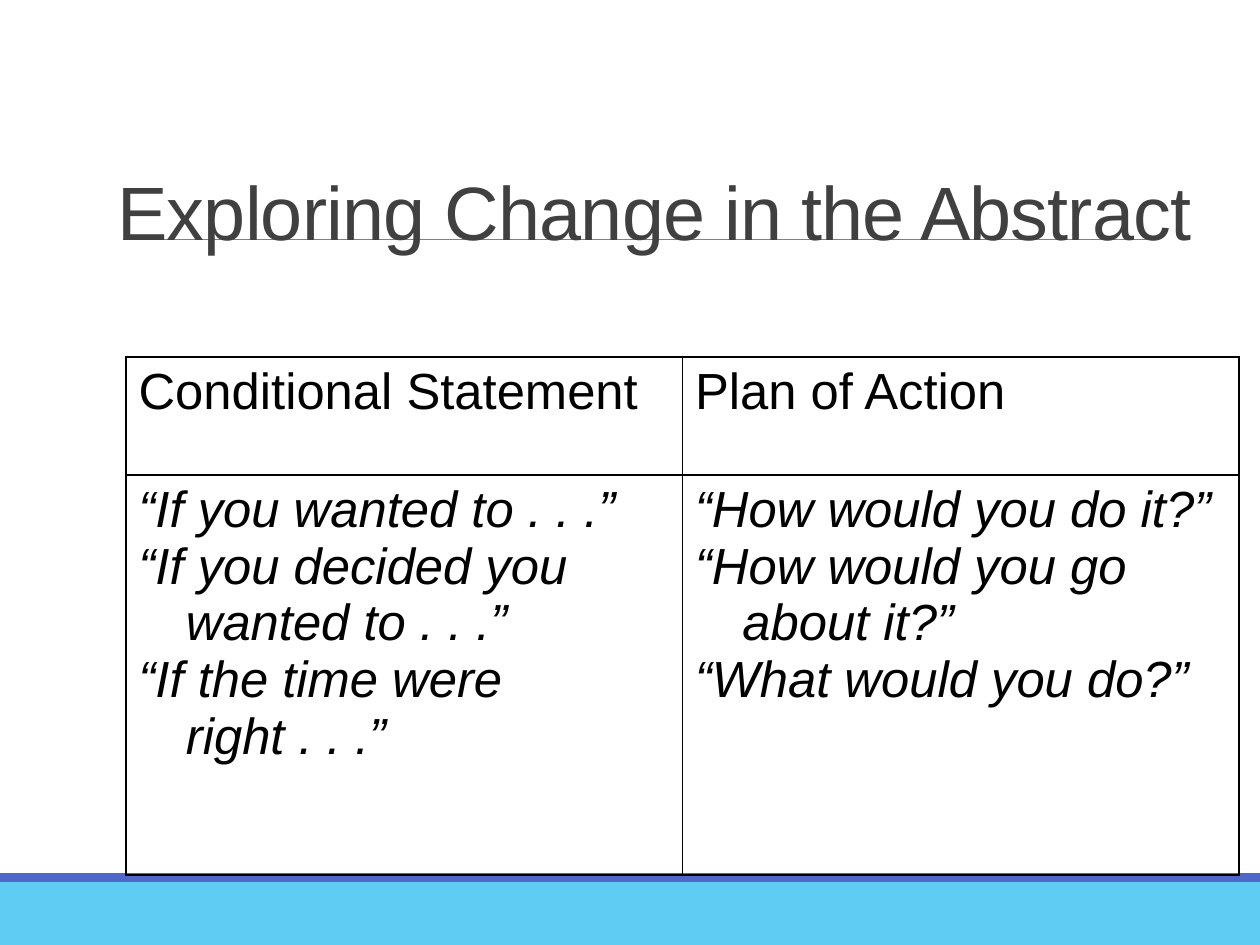
from dataclasses import dataclass

from lxml.etree import SubElement
from pptx import Presentation
from pptx.dml.color import RGBColor
from pptx.enum.shapes import MSO_CONNECTOR, MSO_SHAPE
from pptx.enum.text import MSO_ANCHOR
from pptx.oxml.ns import qn
from pptx.util import Pt


@dataclass(frozen=True)
class Theme:
    font: str = "Arial"
    title_size: float = 43.2
    table_size: float = 29
    title: str = "404040"
    text: str = "000000"
    border: str = "000000"
    rule: str = "808080"
    footer: str = "5ECCF3"
    footer_edge: str = "4E67C8"


THEME = Theme()
SLIDE_WIDTH, SLIDE_HEIGHT = 720, 540
HANGING_INDENT = 27
COLUMN_WIDTH = 318
ROW_HEIGHTS = (67.5, 228.5)
HEADINGS = ("Conditional Statement", "Plan of Action")
CONDITIONS = (
    "“If you wanted to . . .”",
    "“If you decided you wanted to . . .”",
    "“If the time were \nright . . .”",
)
PLANS = (
    "“How would you do it?”",
    "“How would you go about it?”",
    "“What would you do?”",
)


def write_text(paragraph, text, *, size, color, italic=False, tracking=None,
               line_spacing=None, hanging=None):
    """Fill a paragraph; a newline in the text becomes a line break."""
    if line_spacing:
        paragraph.line_spacing = line_spacing
    if hanging:
        properties = paragraph._p.get_or_add_pPr()
        properties.set("marL", str(Pt(hanging)))
        properties.set("indent", str(-Pt(hanging)))
    for index, line in enumerate(text.split("\n")):
        if index:
            paragraph.add_line_break()
        run = paragraph.add_run()
        run.text = line
        run.font.name = THEME.font
        run.font.size = Pt(size)
        run.font.italic = italic
        run.font.color.rgb = RGBColor.from_string(color)
        if tracking:
            run._r.get_or_add_rPr().set("spc", str(round(tracking * 100)))


def add_band(slide, top, height, color):
    band = slide.shapes.add_shape(
        MSO_SHAPE.RECTANGLE, Pt(0), Pt(top), Pt(SLIDE_WIDTH), Pt(height))
    band.shadow.inherit = False
    band.fill.solid()
    band.fill.fore_color.rgb = RGBColor.from_string(color)
    band.line.fill.background()


def add_rule(slide, left, right, y):
    rule = slide.shapes.add_connector(
        MSO_CONNECTOR.STRAIGHT, Pt(left), Pt(y), Pt(right), Pt(y))
    rule.line.color.rgb = RGBColor.from_string(THEME.rule)
    rule.line.width = Pt(0.5)
    SubElement(rule._element.spPr, qn("a:effectLst"))


def add_title(slide, text):
    title = slide.shapes.add_textbox(Pt(60), Pt(60), Pt(636), Pt(90))
    frame = title.text_frame
    frame.word_wrap = True
    frame.vertical_anchor = MSO_ANCHOR.BOTTOM
    write_text(frame.paragraphs[0], text, size=THEME.title_size,
               color=THEME.title, tracking=-0.5, line_spacing=0.85)


def add_borders(cell):
    properties = cell._tc.get_or_add_tcPr()
    for position, side in enumerate(("a:lnL", "a:lnR", "a:lnT", "a:lnB")):
        border = SubElement(properties, qn(side), w=str(Pt(1)))
        properties.insert(position, border)
        fill = SubElement(border, qn("a:solidFill"))
        SubElement(fill, qn("a:srgbClr"), val=THEME.border)


def fill_cell(cell, lines, italic):
    cell.fill.background()
    add_borders(cell)
    frame = cell.text_frame
    for index, line in enumerate(lines):
        paragraph = frame.add_paragraph() if index else frame.paragraphs[0]
        write_text(paragraph, line, size=THEME.table_size, color=THEME.text,
                   italic=italic, hanging=HANGING_INDENT)


def add_statement_table(slide):
    rows = ([[heading] for heading in HEADINGS], [CONDITIONS, PLANS])
    table = slide.shapes.add_table(
        len(rows), len(HEADINGS), Pt(72), Pt(204),
        Pt(COLUMN_WIDTH * len(HEADINGS)), Pt(sum(ROW_HEIGHTS))).table
    table.first_row = False
    table.horz_banding = False
    for column in table.columns:
        column.width = Pt(COLUMN_WIDTH)
    for row_index, (height, contents) in enumerate(zip(ROW_HEIGHTS, rows)):
        table.rows[row_index].height = Pt(height)
        for column_index, lines in enumerate(contents):
            fill_cell(table.cell(row_index, column_index), lines,
                      italic=row_index > 0)


def main():
    presentation = Presentation()
    presentation.slide_width = Pt(SLIDE_WIDTH)
    presentation.slide_height = Pt(SLIDE_HEIGHT)
    slide = presentation.slides.add_slide(presentation.slide_layouts[6])
    add_band(slide, 504, 36, THEME.footer)
    add_band(slide, 499, 5, THEME.footer_edge)
    add_rule(slide, 70.5, 659, 136.8)
    add_title(slide, "Exploring Change in the Abstract")
    add_statement_table(slide)
    presentation.save("out.pptx")


if __name__ == "__main__":
    main()
